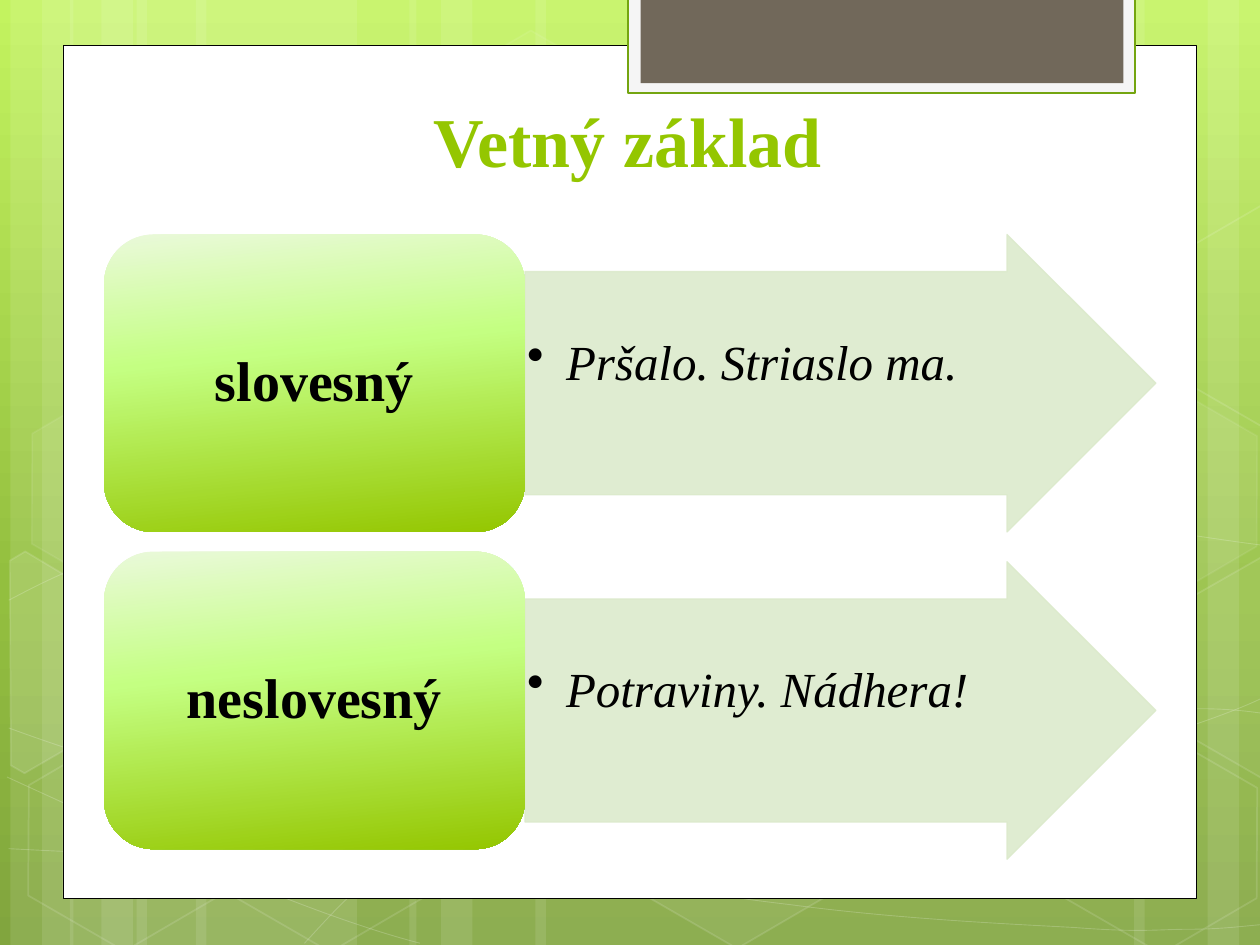
"""Build the slide on verbal and non-verbal sentence bases."""
from copy import deepcopy
from math import cos, radians, sin

from pptx import Presentation
from pptx.dml.color import RGBColor as RGB
from pptx.enum.shapes import MSO_SHAPE as Preset
from pptx.enum.text import MSO_ANCHOR as Anchor, PP_ALIGN as Align
from pptx.oxml.ns import qn
from pptx.oxml.xmlchemy import OxmlElement as Element
from pptx.util import Pt

WHITE = RGB(0xFF, 0xFF, 0xFF)
BLACK = RGB(0, 0, 0)
GREEN = RGB(0x94, 0xC6, 0x00)
TAB_EDGE = RGB(0x74, 0xA5, 0x10)
TAB_RIM = RGB(0xF5, 0xF5, 0xF5)
TAB_CORE = RGB(0x71, 0x68, 0x5A)
ARROW_GREEN = RGB(0xDC, 0xEA, 0xCC)
BACKDROP = [(0, RGB(0xC3, 0xF3, 0x5F)), (0.62, RGB(0x93, 0xBF, 0x3F)),
            (1, RGB(0x81, 0xA5, 0x3E))]
LABEL_FADE = [(0, RGB(0xEA, 0xF9, 0xDA)), (0.4, RGB(0xC4, 0xFF, 0x82)), (1, GREEN)]
FONT = "Times New Roman"

SLIDE_WIDTH, SLIDE_HEIGHT = 720, 540
TILT = 30
BAR_OFFSETS = [(72, 126), (0, 36), (18, 60)]
BAR_CLUSTERS = [(6, 126, False), (40, 126, False), (726, 126, True), (234, 222, False)]
WAVES = [
    [(5, 485), (44, 487), (83, 489), (137, 488), (191, 487), (258, 486), (330, 479),
     (402, 472), (504, 458), (570, 444), (636, 431), (703, 409), (725, 397)],
    [(5, 343), (26, 332), (47, 321), (87, 310), (128, 300), (186, 284), (250, 279),
     (314, 274), (392, 273), (471, 279), (550, 284), (682, 307), (725, 312)],
    [(4, 444), (91, 484), (178, 523), (240, 539)],
    [(5, 416), (27, 424), (50, 432), (92, 444), (134, 454), (197, 472), (257, 485),
     (317, 497), (392, 510), (452, 517), (512, 525), (576, 528), (614, 530),
     (652, 533), (662, 531), (680, 531), (699, 531), (712, 529), (725, 528)],
    [(174, 539), (187, 525), (200, 510), (217, 498), (235, 485), (259, 470), (279, 460),
     (300, 450), (312, 446), (338, 438), (364, 431), (413, 421), (438, 416),
     (464, 411), (467, 411), (490, 410), (512, 408), (547, 406), (572, 405),
     (597, 404), (638, 405), (638, 405), (654, 405), (670, 405), (686, 405),
     (699, 405), (711, 406), (724, 408)],
]
HEXAGONS = [(240.5, 26, 4, 8), (358, 424, 6, 12), (8, 425.5, 0, 12), (10, 224.5, 7, 8),
            (125.5, 426, 0, 12), (542, 326, 10, 12), (600.5, 427, 0, 12),
            (600.5, 226, 7, 8)]
LEFT_EDGE = [(6, 320), (14, 315), (69, 347), (68, 410), (14, 442), (6, 437)]
LEFT_PIVOT = (26, 385)
RIGHT_EDGE = [(667, 349), (721, 318), (726, 321), (726, 441), (721, 444), (667, 413)]
RIGHT_PIVOT = (709, 374.5)
RIGHT_STEP = 200.5
ROWS = [("slovesný", "Pršalo. Striaslo ma.", 134, 134),
        ("neslovesný", "Potraviny. Nádhera!", 315.2, 321)]


def paint(fill, color, opacity=100):
    if color is None or not opacity:
        fill.background()
        return
    fill.solid()
    fill.fore_color.rgb = color
    if opacity < 100:
        alpha = Element("a:alpha")
        alpha.set("val", str(opacity * 1000))
        fill._xPr.find(qn("a:solidFill")).find(qn("a:srgbClr")).append(alpha)


def fade(fill, stops, angle):
    fill.gradient()
    fill.gradient_angle = 360 - angle
    first = fill.gradient_stops[0]._gs
    for _ in range(len(stops) - 2):
        first.addnext(deepcopy(first))
    for stop, (position, color) in zip(fill.gradient_stops, stops):
        stop.position = position
        stop.color.rgb = color


def style(shape, color=None, opacity=100, edge=None, edge_opacity=100, weight=1):
    shape.shadow.inherit = False
    paint(shape.fill, color, opacity)
    paint(shape.line.fill, edge, edge_opacity)
    if edge is not None:
        shape.line.width = Pt(weight)
    return shape


def add_preset(slide, preset, x, y, width, height, **look):
    shape = slide.shapes.add_shape(preset, Pt(x), Pt(y), Pt(width), Pt(height))
    return style(shape, **look)


def add_outline(slide, points, close, **look):
    builder = slide.shapes.build_freeform(*points[0], scale=Pt(1))
    builder.add_line_segments(points[1:], close=close)
    return style(builder.convert_to_shape(), **look)


def add_wave(slide, knots):
    wave = add_outline(slide, knots, False, edge=WHITE, edge_opacity=20, weight=0.5)
    segments = list(wave._element.iter(qn("a:lnTo")))
    for start in range(0, len(segments), 3):
        curve = Element("a:cubicBezTo")
        segments[start].addprevious(curve)
        for segment in segments[start:start + 3]:
            curve.append(segment[0])
            segment.getparent().remove(segment)


def add_cut_hexagon(slide, corners, pivot, opacity, rise=0):
    turn_cos, turn_sin = cos(radians(TILT)), sin(radians(TILT))
    upright = []
    for x, y in corners:
        dx, dy = x - pivot[0], y - pivot[1]
        upright.append((pivot[0] + dx * turn_cos + dy * turn_sin,
                        pivot[1] - rise - dx * turn_sin + dy * turn_cos))
    cut = add_outline(slide, upright, True, color=WHITE, opacity=opacity,
                      edge=WHITE, edge_opacity=12)
    cut.rotation = TILT


def write(slide, text, x, y, width, height, size, color=BLACK, bold=False, italic=False,
          align=Align.CENTER, anchor=Anchor.MIDDLE, insets=(7.2, 3.6, 7.2, 3.6),
          spacing=1, bullet_indent=0):
    frame = slide.shapes.add_textbox(Pt(x), Pt(y), Pt(width), Pt(height)).text_frame
    frame.word_wrap = True
    frame.vertical_anchor = anchor
    frame.margin_left, frame.margin_top, frame.margin_right, frame.margin_bottom = map(Pt, insets)
    paragraph = frame.paragraphs[0]
    paragraph.alignment = align
    paragraph.line_spacing = spacing
    run = paragraph.add_run()
    run.text = text
    run.font.name, run.font.size = FONT, Pt(size)
    run.font.bold, run.font.italic = bold, italic
    run.font.color.rgb = color
    if bullet_indent:
        properties = paragraph._p.get_or_add_pPr()
        properties.set("marL", str(Pt(bullet_indent)))
        properties.set("indent", str(-Pt(bullet_indent)))
        bullet = Element("a:buChar")
        bullet.set("char", "•")
        properties.append(bullet)


def add_backdrop(slide):
    fade(slide.background.fill, BACKDROP, 90)
    for origin, widest, mirrored in BAR_CLUSTERS:
        for offset, width in BAR_OFFSETS:
            width = widest if offset == 72 else width
            x = origin - offset - width if mirrored else origin + offset
            bar = add_preset(slide, Preset.RECTANGLE, x, 0, width, SLIDE_HEIGHT,
                             color=WHITE, opacity=10)
            bar.rotation = 180 if mirrored else 0
    for knots in WAVES:
        add_wave(slide, knots)
    for x, y, opacity, edge_opacity in HEXAGONS:
        hexagon = add_preset(slide, Preset.HEXAGON, x, y, 126, 109.5, color=WHITE,
                             opacity=opacity, edge=WHITE, edge_opacity=edge_opacity)
        hexagon.adjustments[0] = 0.285
        hexagon.rotation = TILT
    add_cut_hexagon(slide, LEFT_EDGE, LEFT_PIVOT, 10)
    add_cut_hexagon(slide, RIGHT_EDGE, RIGHT_PIVOT, 4)
    add_cut_hexagon(slide, RIGHT_EDGE, RIGHT_PIVOT, 0, rise=RIGHT_STEP)


def add_page(slide):
    add_preset(slide, Preset.RECTANGLE, 36, 26, 648, 487.2, color=WHITE, edge=BLACK, weight=0.5)
    add_preset(slide, Preset.RECTANGLE, 359, -1.5, 289.5, 54.5,
               color=TAB_RIM, edge=TAB_EDGE, weight=1.25)
    add_preset(slide, Preset.RECTANGLE, 366, -1.5, 276, 49, color=TAB_CORE)
    write(slide, "Vetný základ", 82, 65.5, 553, 42, size=40, color=GREEN, bold=True,
          anchor=Anchor.BOTTOM)


def add_row(slide, label, example, label_y, arrow_y):
    arrow = add_preset(slide, Preset.RIGHT_ARROW, 300, arrow_y, 360.5, 170, color=ARROW_GREEN,
                       opacity=90, edge=ARROW_GREEN, edge_opacity=90, weight=0.75)
    arrow.adjustments[0] = 0.75
    write(slide, example, 300, arrow_y + 21.25, 297, 127.5, size=28, italic=True,
          align=Align.LEFT, anchor=Anchor.TOP, insets=(1.25, 36, 1.25, 1.25),
          bullet_indent=22.25)
    box = add_preset(slide, Preset.ROUNDED_RECTANGLE, 59.5, label_y, 240.5, 170)
    fade(box.fill, LABEL_FADE, 84)
    write(slide, label, 67.75, label_y + 8.25, 224, 153.5, size=32, bold=True,
          insets=(9.5, 4.75, 9.5, 4.75), spacing=0.9)


def main():
    deck = Presentation()
    deck.slide_width, deck.slide_height = Pt(SLIDE_WIDTH), Pt(SLIDE_HEIGHT)
    slide = deck.slides.add_slide(deck.slide_layouts[6])
    add_backdrop(slide)
    add_page(slide)
    for row in ROWS:
        add_row(slide, *row)
    deck.save("out.pptx")


if __name__ == "__main__":
    main()
